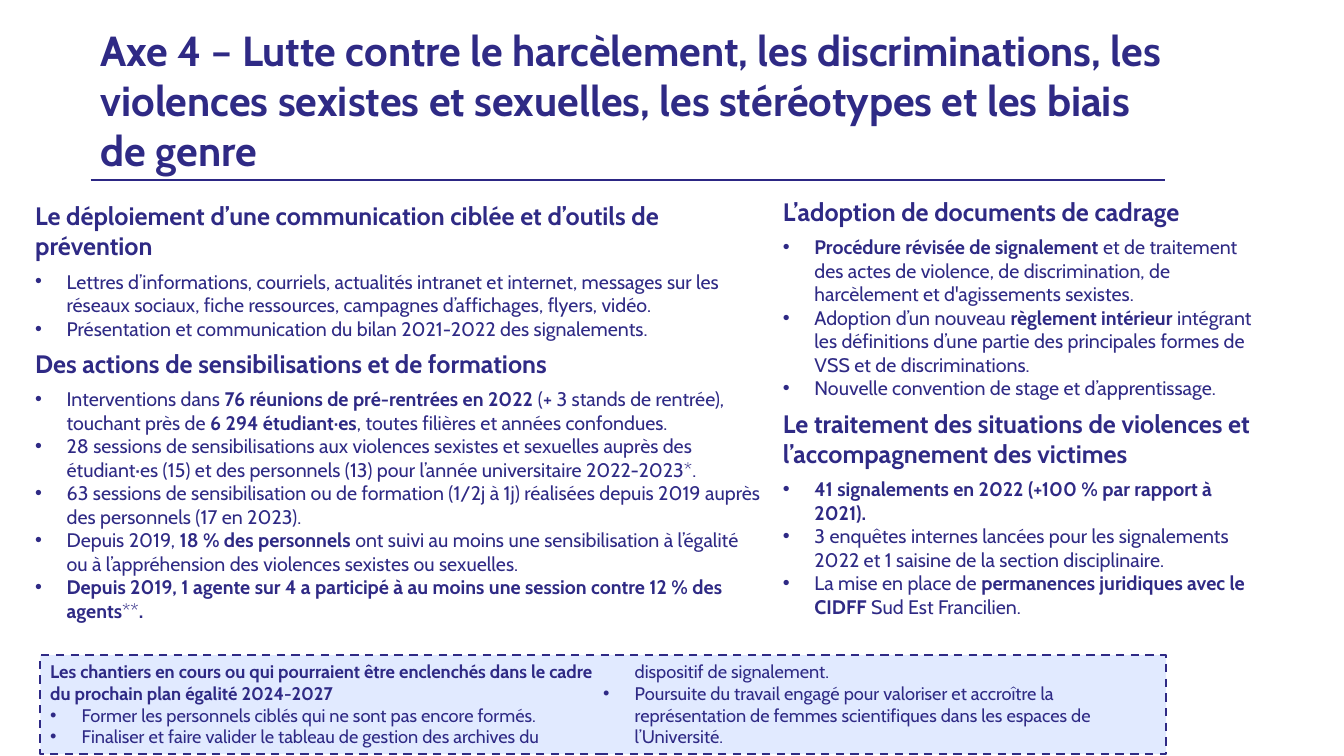
from dataclasses import dataclass

from lxml import etree
from pptx import Presentation
from pptx import util as u
from pptx.dml.color import RGBColor
from pptx.enum import dml, shapes, text
from pptx.oxml import ns


@dataclass(frozen=True)
class Theme:
    """Colours, font and type sizes in points."""
    ink: RGBColor = RGBColor(0x2F, 0x2A, 0x85)
    rule: RGBColor = RGBColor(0x2C, 0x27, 0x84)
    panel: RGBColor = RGBColor(0xE1, 0xEA, 0xFF)
    font: str = "Cabin"
    title: float = 30
    heading: float = 18
    body: float = 14
    note: float = 13
    line: float = 1.5
    indent: float = 22.5
    gap: float = 6


class Page:
    """Draws styled elements on one slide."""

    def __init__(self, prs, theme):
        self.theme = theme
        self.slide = prs.slides.add_slide(prs.slide_layouts[6])

    def frame(self, sp):
        """Return the wrapped, top-anchored text frame of a shape."""
        tf = sp.text_frame
        formats = {"word_wrap": True, "auto_size": text.MSO_AUTO_SIZE.NONE,
                   "vertical_anchor": text.MSO_ANCHOR.TOP}
        for name, value in formats.items():
            setattr(tf, name, value)
        return tf

    def paragraph(self, tf, content, size, bold=False, bullet=False, before=0):
        """Add a paragraph in which each bar toggles bold."""
        p = tf.paragraphs[0] if not tf.text else tf.add_paragraph()
        p.alignment = text.PP_ALIGN.LEFT
        p.space_before = u.Pt(before)
        if bullet:
            pPr = p._p.get_or_add_pPr()
            indent = u.Pt(self.theme.indent)
            pPr.set("marL", str(indent))
            pPr.set("indent", str(-indent))
            etree.SubElement(pPr, ns.qn("a:buFont"), typeface="Arial")
            etree.SubElement(pPr, ns.qn("a:buChar"), char="•")
        for i, part in enumerate(content.split("|")):
            if part:
                r = p.add_run()
                r.text = part
                formats = {"name": self.theme.font, "size": u.Pt(size),
                           "bold": bold != (i % 2 == 1)}
                for name, value in formats.items():
                    setattr(r.font, name, value)
                r.font.color.rgb = self.theme.ink

    def title(self, content, *box):
        """Add the slide title."""
        sp = self.slide.shapes.add_textbox(*map(u.Pt, box))
        self.paragraph(self.frame(sp), content, self.theme.title, bold=True)

    def column(self, sections, *box):
        """Add a column of headings, each followed by its bullets."""
        tf = self.frame(self.slide.shapes.add_textbox(*map(u.Pt, box)))
        gap = self.theme.gap
        for n, (heading, bullets) in enumerate(sections):
            self.paragraph(tf, heading, self.theme.heading, bold=True,
                           before=gap if n else 0)
            for i, bullet in enumerate(bullets):
                self.paragraph(tf, bullet, self.theme.body, bullet=True,
                               before=0 if i else gap)

    def rule(self, left, right, y):
        """Add a horizontal line."""
        ends = map(u.Pt, (left, y, right, y))
        sp = self.slide.shapes.add_connector(shapes.MSO_CONNECTOR.STRAIGHT, *ends)
        sp.line.color.rgb = self.theme.rule
        sp.line.width = u.Pt(self.theme.line)
        etree.SubElement(sp._element.spPr, ns.qn("a:effectLst"))

    def panel(self, heading, bullets, *box):
        """Add a dashed panel with its text in two columns."""
        sp = self.slide.shapes.add_shape(shapes.MSO_SHAPE.RECTANGLE, *map(u.Pt, box))
        sp.shadow.inherit = False
        sp.fill.solid()
        sp.fill.fore_color.rgb = self.theme.panel
        sp.line.color.rgb = self.theme.ink
        sp.line.width = u.Pt(self.theme.line)
        sp.line.dash_style = dml.MSO_LINE.DASH
        tf = self.frame(sp)
        tf.auto_size = text.MSO_AUTO_SIZE.SHAPE_TO_FIT_TEXT
        tf._txBody.bodyPr.set("numCol", "2")
        self.paragraph(tf, heading, self.theme.note, bold=True)
        for bullet in bullets:
            self.paragraph(tf, bullet, self.theme.note, bullet=True)


FRAMING = [
    ("L’adoption de documents de cadrage", [
        "|Procédure révisée de signalement |et de traitement des actes de violence, "
        "de discrimination, de harcèlement et d'agissements sexistes.",
        "Adoption d’un nouveau |règlement intérieur |intégrant les définitions "
        "d’une partie des principales formes de VSS et de discriminations.",
        "Nouvelle convention de stage et d’apprentissage.",
    ]),
    ("Le traitement des situations de violences et l’accompagnement des victimes", [
        "|41 signalements en 2022 (+100 % par rapport à 2021).",
        "3 enquêtes internes lancées pour les signalements 2022 et 1 saisine de la "
        "section disciplinaire.",
        "La mise en place de |permanences juridiques avec le CIDFF| Sud Est Francilien.",
    ]),
]
PREVENTION = [
    ("Le déploiement d’une communication ciblée et d’outils de prévention", [
        "Lettres d’informations, courriels, actualités intranet et internet, messages "
        "sur les réseaux sociaux, fiche ressources, campagnes d’affichages, flyers, vidéo.",
        "Présentation et communication du bilan 2021-2022 des signalements.",
    ]),
    ("Des actions de sensibilisations et de formations", [
        "Interventions dans |76 réunions de pré-rentrées en 2022 |(+ 3 stands de "
        "rentrée), touchant près de |6 294 étudiant·es|, toutes filières et années "
        "confondues.",
        "28 sessions de sensibilisations aux violences sexistes et sexuelles auprès des "
        "étudiant·es (15) et des personnels (13) pour l’année universitaire 2022-2023*.",
        "63 sessions de sensibilisation ou de formation (1/2j à 1j) réalisées depuis "
        "2019 auprès des personnels (17 en 2023).",
        "Depuis 2019, |18 % des personnels |ont suivi au moins une sensibilisation à "
        "l’égalité ou à l’appréhension des violences sexistes ou sexuelles.",
        "|Depuis 2019, 1 agente sur 4 a participé à au moins une session contre 12 % "
        "des agents|**|.",
    ]),
]
PROJECTS = [
    "Former les personnels ciblés qui ne sont pas encore formés.",
    "Finaliser et faire valider le tableau de gestion des archives du dispositif de "
    "signalement.",
    "Poursuite du travail engagé pour valoriser et accroître la représentation de "
    "femmes scientifiques dans les espaces de l’Université.",
]


def main():
    """Build the slide and save it."""
    prs = Presentation()
    prs.slide_width, prs.slide_height = u.Pt(960), u.Pt(540)
    page = Page(prs, Theme())
    page.title("Axe 4 – Lutte contre le harcèlement, les discriminations, les violences "
               "sexistes et sexuelles, les stéréotypes et les biais de genre",
               64.8, 13.7, 778.3, 112.3)
    page.column(FRAMING, 552.2, 136.8, 360, 330.5)
    page.column(PREVENTION, 18, 139.7, 534.2, 330.5)
    page.rule(64.8, 832.3, 128.9)
    page.panel("Les chantiers en cours ou qui pourraient être enclenchés dans le cadre du "
               "prochain plan égalité 2024-2027", PROJECTS, 28.8, 468, 804.2, 70.6)
    prs.save("out.pptx")


if __name__ == "__main__":
    main()
